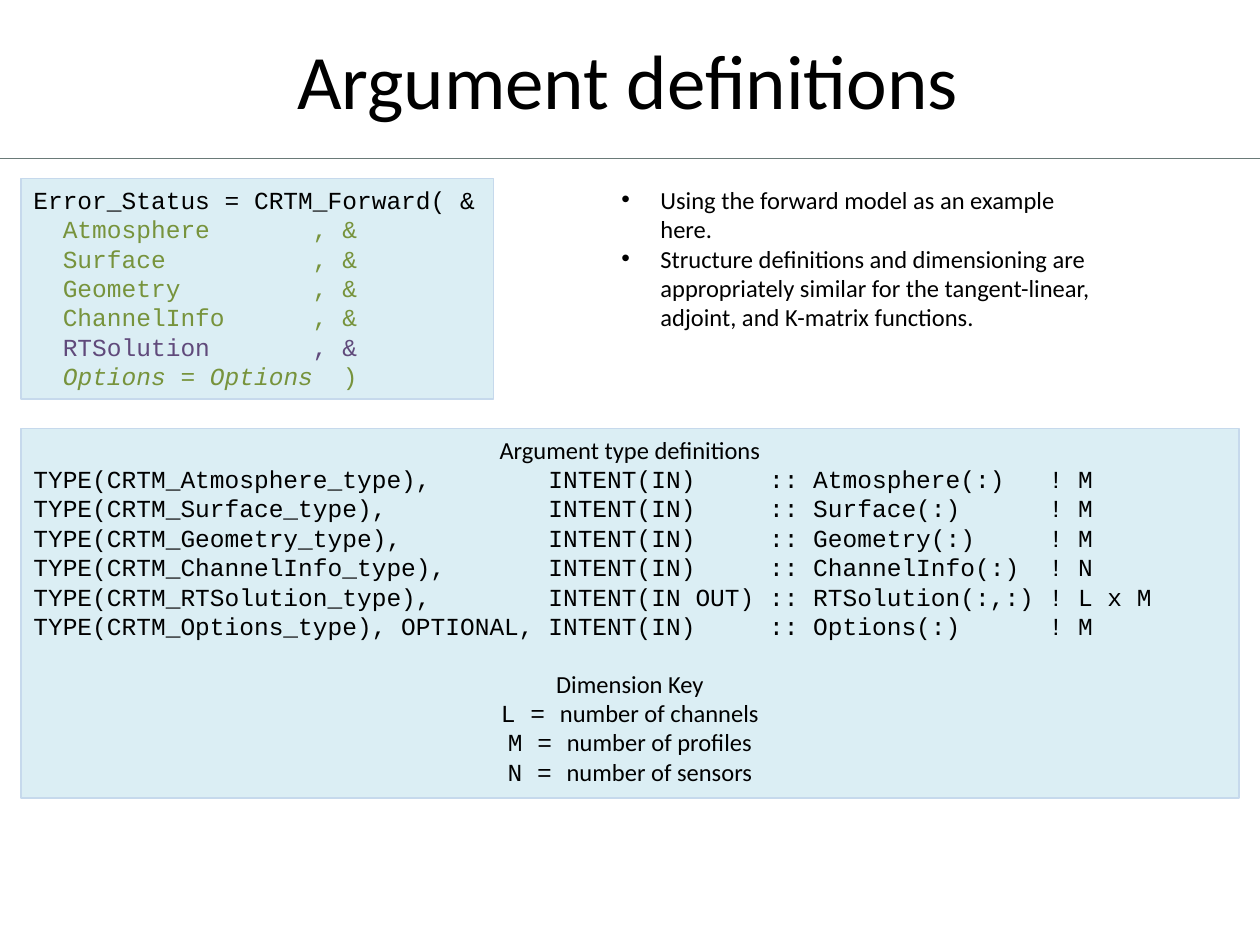
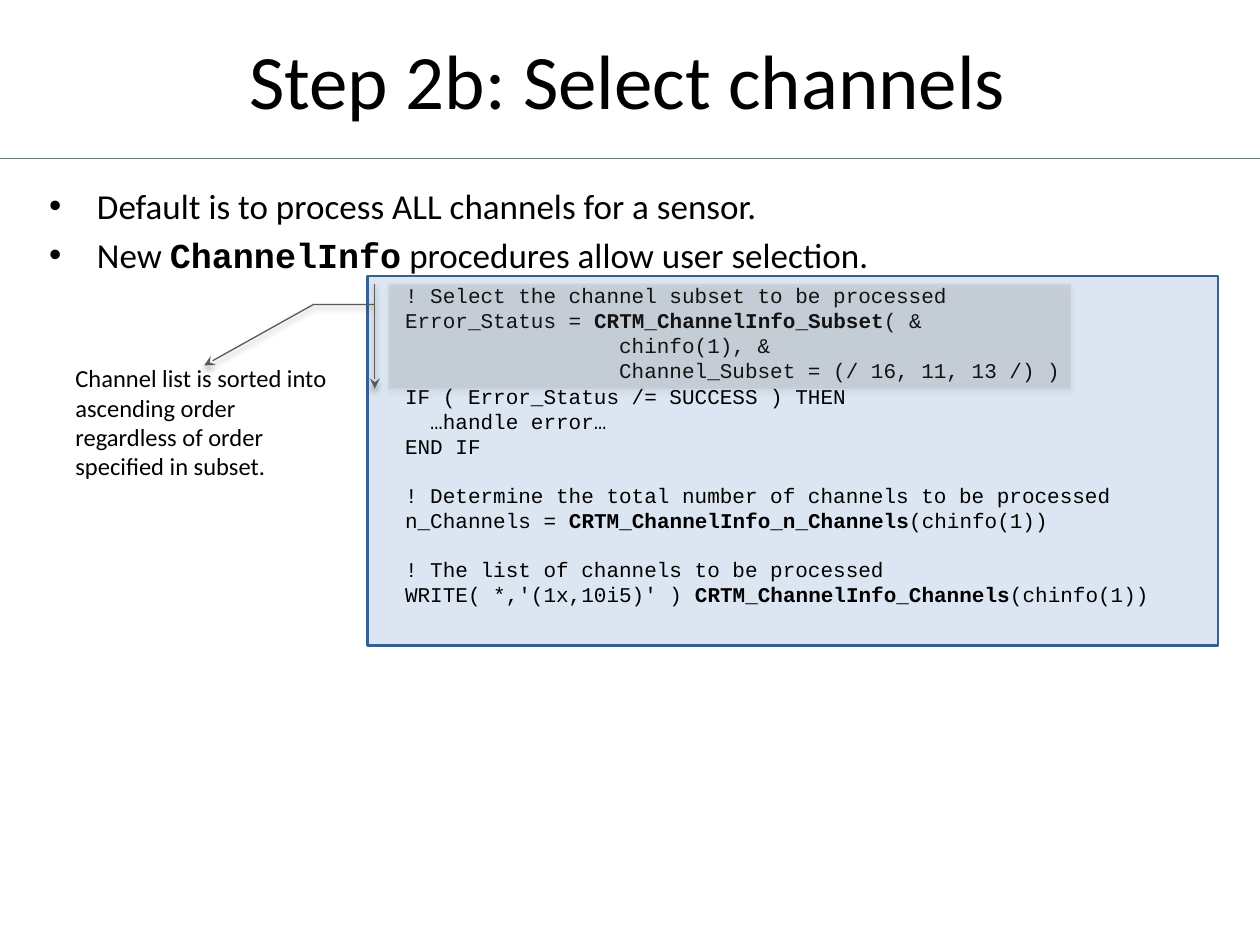
from lxml import etree
from pptx import Presentation, util as u
from pptx.dml.color import RGBColor
from pptx.enum import shapes, text
from pptx.oxml.ns import qn

BLACK = RGBColor(0, 0, 0)
GREEN = RGBColor(0x77, 0x93, 0x3C)
PURPLE = RGBColor(0x60, 0x4A, 0x7B)
AQUA = RGBColor(0xDB, 0xEE, 0xF4)
MIST = RGBColor(0xC6, 0xD9, 0xEC)
PALE = RGBColor(0xDC, 0xE6, 0xF2)
NAVY = RGBColor(0x37, 0x60, 0x92)
RULE = RGBColor(0x6A, 0x7A, 0x78)
GREY = RGBColor(0x80, 0x80, 0x80)
DARK = RGBColor(0x59, 0x59, 0x59)

UNIT = 1 / 12
LEFT, MID = text.PP_ALIGN.LEFT, text.PP_ALIGN.CENTER

STYLES = {
    "body": ("Calibri", BLACK, False, False),
    "code": ("Courier New", BLACK, False, False),
    "bold": ("Courier New", BLACK, True, False),
    "in": ("Courier New", GREEN, False, False),
    "opt": ("Courier New", GREEN, False, True),
    "out": ("Courier New", PURPLE, False, False),
}

INPUTS = ["Atmosphere", "Surface", "Geometry", "ChannelInfo"]
CALL = [
    [("Error_Status = CRTM_Forward( &", "code")],
    *[[(f"  {name:<17}, &", "in")] for name in INPUTS],
    [(f"  {'RTSolution':<17}, &", "out")],
    [("  ", "in"), ("Options = Options  ", "opt"), (")", "in")],
]

TYPES = [
    ("Atmosphere", "", "IN", ":", "M"),
    ("Surface", "", "IN", ":", "M"),
    ("Geometry", "", "IN", ":", "M"),
    ("ChannelInfo", "", "IN", ":", "N"),
    ("RTSolution", "", "IN OUT", ":,:", "L x M"),
    ("Options", " OPTIONAL,", "IN", ":", "M"),
]
KEYS = [("L", "channels"), ("M", "profiles"), ("N", "sensors")]

NOTES = [
    [("Using the forward model as an example here.", "body")],
    [("Structure definitions and dimensioning are appropriately similar for "
      "the tangent-linear, adjoint, and K-matrix functions.", "body")],
]

POINTS = [
    [("Default is to process ALL channels for a sensor.", "body")],
    [("New ", "body"), ("ChannelInfo", "bold"),
     (" procedures allow user selection.", "body")],
]

BLOCKS = [
    [
        [("  ! Select the channel subset to be processed", "code")],
        [("  Error_Status = ", "code"), ("CRTM_ChannelInfo_Subset", "bold"),
         ("( &", "code")],
        [("                   chinfo(1), &", "code")],
        [("                   Channel_Subset = (/ 16, 11, 13 /) )", "code")],
        [("  IF ( Error_Status /= SUCCESS ) THEN", "code")],
        [("    …handle error…", "code")],
        [("  END IF", "code")],
    ],
    [
        [("  ! Determine the total number of channels to be processed", "code")],
        [("  n_Channels = ", "code"), ("CRTM_ChannelInfo_n_Channels", "bold"),
         ("(chinfo(1))", "code")],
    ],
    [
        [("  ! The list of channels to be processed", "code")],
        [("  WRITE( *,'(1x,10i5)' ) ", "code"),
         ("CRTM_ChannelInfo_Channels", "bold"), ("(chinfo(1))", "code")],
    ],
]

SORTED = [[("Channel list is sorted into ascending order regardless of order "
            "specified in subset.", "body")]]


def grid(*cells):
    return [u.Inches(cell * UNIT) for cell in cells]


def add_para(frame, runs, size, align=LEFT, gap=0, hang=0):
    first = frame.paragraphs[0]
    para = frame.add_paragraph() if first.runs else first
    para.alignment = align
    if hang:
        props = para._p.get_or_add_pPr()
        props.set("marL", str(u.Inches(hang)))
        props.set("indent", str(-u.Inches(hang)))
        etree.SubElement(props, qn("a:buFont"), typeface="Arial")
        etree.SubElement(props, qn("a:buChar"), char="•")
    if gap:
        para.space_before = u.Pt(gap)
    for words, style in runs:
        run = para.add_run()
        run.text = words
        font = run.font
        font.name, font.color.rgb, font.bold, font.italic = STYLES[style]
        font.size = u.Pt(size)


def add_box(slide, *cells):
    frame = slide.shapes.add_textbox(*grid(*cells)).text_frame
    frame.word_wrap = True
    return frame


def add_panel(slide, cells, fill, edge, width, kind=shapes.MSO_SHAPE.RECTANGLE):
    panel = slide.shapes.add_shape(kind, *grid(*cells))
    panel.shadow.inherit = False
    panel.fill.solid()
    panel.fill.fore_color.rgb = fill
    panel.line.color.rgb = edge
    panel.line.width = u.Pt(width)
    panel.text_frame.word_wrap = True
    panel.text_frame.vertical_anchor = text.MSO_ANCHOR.TOP
    return panel


def add_slide(deck, title):
    slide = deck.slides.add_slide(deck.slide_layouts[6])
    rule = slide.shapes.add_connector(
        shapes.MSO_CONNECTOR.STRAIGHT, *grid(0, 15.1, 120, 15.1))
    rule.line.color.rgb = RULE
    rule.line.width = u.Pt(0.75)
    etree.SubElement(rule._element.spPr, qn("a:effectLst"))
    frame = add_box(slide, 13.8, 0, 92, 15)
    frame.vertical_anchor = text.MSO_ANCHOR.MIDDLE
    add_para(frame, [(title, "body")], 44, MID)
    return slide


def add_callout(slide):
    mark = add_panel(slide, (37, 27, 65, 10), GREY, DARK, 0.75,
                     shapes.MSO_SHAPE.LINE_CALLOUT_2_ACCENT_BAR)
    for spot, value in enumerate((0.2, -0.02, 0.2, -0.11, 0.78, -0.27)):
        mark.adjustments[spot] = value
    props = mark._element.spPr
    tint = props.find(qn("a:solidFill")).find(qn("a:srgbClr"))
    etree.SubElement(tint, qn("a:alpha"), val="15000")
    etree.SubElement(props.find(qn("a:ln")), qn("a:tailEnd"), type="stealth")
    shade = etree.SubElement(
        props.find(qn("a:effectLst")), qn("a:outerShdw"),
        blurRad=str(u.Pt(3.1)), dist=str(u.Pt(1.8)), dir="5400000", rotWithShape="0")
    ink = etree.SubElement(shade, qn("a:srgbClr"), val=str(BLACK))
    etree.SubElement(ink, qn("a:alpha"), val="35000")


def build_args(deck):
    slide = add_slide(deck, "Argument definitions")
    frame = add_panel(slide, (2, 17, 45, 21), AQUA, MIST, 1).text_frame
    for runs in CALL:
        add_para(frame, runs, 14)

    frame = add_panel(slide, (2, 40.8, 116, 35.2), AQUA, MIST, 1).text_frame
    add_para(frame, [("Argument type definitions", "body")], 14, MID)
    for name, extra, intent, dims, key in TYPES:
        head = f"TYPE(CRTM_{name}_type),{extra}"
        use, var = f"INTENT({intent})", f"{name}({dims})"
        add_para(frame, [(f"{head:<35}{use:<15}:: {var:<16}! {key}", "code")], 14)
    add_para(frame, [("Dimension Key", "body")], 14, MID, gap=16)
    for key, thing in KEYS:
        add_para(frame, [(f"{key} = ", "code"), (f"number of {thing}", "body")], 14, MID)

    frame = add_box(slide, 58, 17, 49, 16)
    for runs in NOTES:
        add_para(frame, runs, 14, hang=0.31)


def build_step(deck):
    slide = add_slide(deck, "Step 2b: Select channels")
    frame = add_panel(slide, (35, 26.3, 81, 35.2), PALE, NAVY, 1.5).text_frame
    for part, block in enumerate(BLOCKS):
        for row, runs in enumerate(block):
            add_para(frame, runs, 12, gap=13.6 if part and not row else 0)

    frame = add_box(slide, 3.5, 17, 113, 9)
    for row, runs in enumerate(POINTS):
        add_para(frame, runs, 20, gap=4 * row, hang=0.38)

    add_callout(slide)
    frame = add_box(slide, 6, 34, 27, 11)
    for runs in SORTED:
        add_para(frame, runs, 14)


def main():
    deck = Presentation()
    deck.slide_width, deck.slide_height = grid(120, 90)
    build_args(deck)
    build_step(deck)
    deck.save("out.pptx")


if __name__ == "__main__":
    main()
